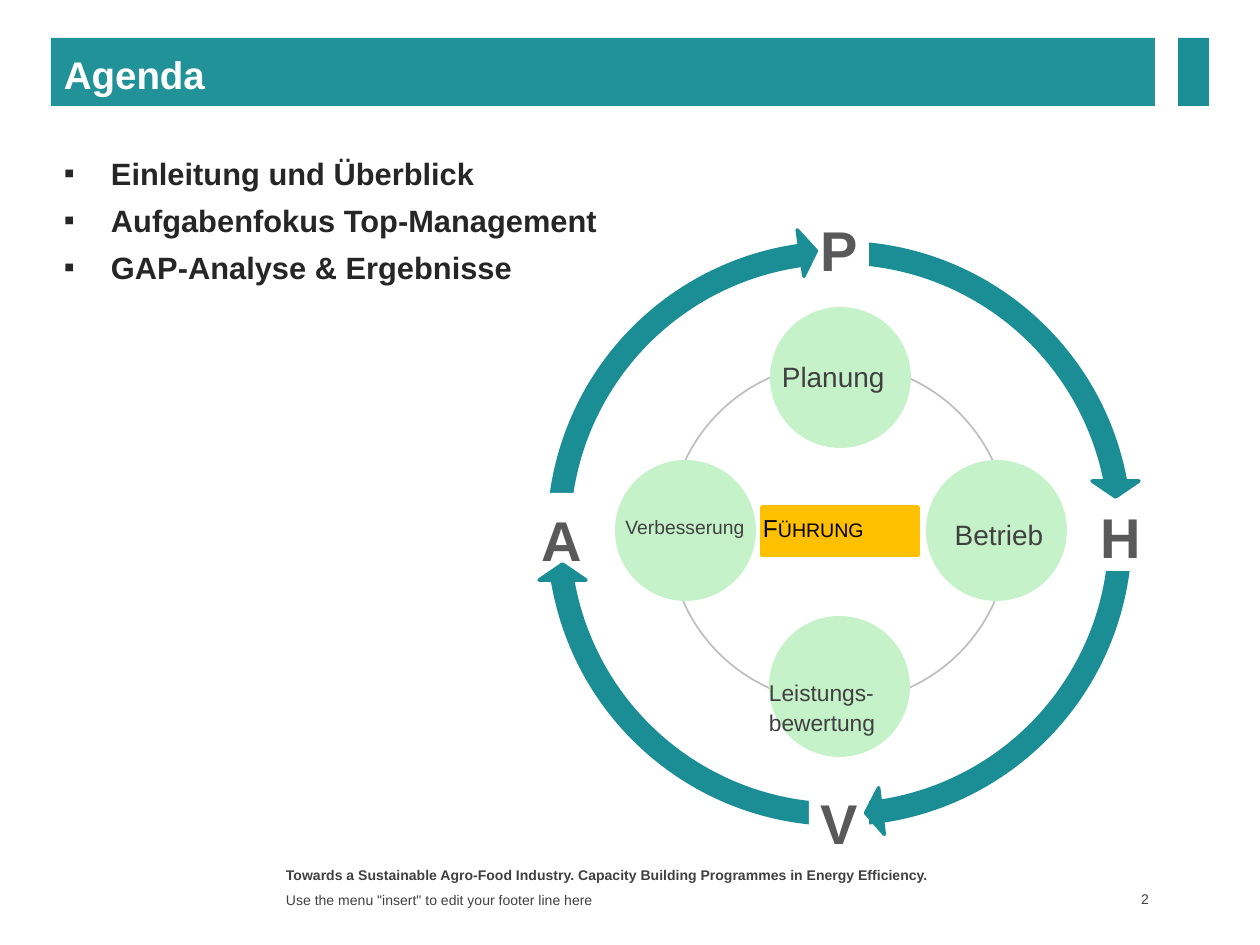
import pptx
import pptx.util
import pptx.dml.color
import pptx.enum.shapes
import pptx.enum.text
import pptx.oxml.ns
import lxml.etree

SHAPE = pptx.enum.shapes.MSO_SHAPE
ALIGN = pptx.enum.text.PP_ALIGN
ANCHOR = pptx.enum.text.MSO_ANCHOR
PX_PER_INCH = 126
TEAL = "1B8E95"
AMBER = "FFC000"
WHITE = "FFFFFF"
DARK = "404040"


def px(length):
    return pptx.util.Emu(round(length * 914400 / PX_PER_INCH))


def color(hex_code):
    return pptx.dml.color.RGBColor.from_string(hex_code)


class AgendaSlide:
    font_name = "Arial"
    line_spacing = 1.1

    def __init__(self, deck):
        self.slide = deck.slides.add_slide(deck.slide_layouts[6])

    def shape(self, preset, box, fill=None, line=None, line_width=1, turn=0):
        item = self.slide.shapes.add_shape(preset, *map(px, box))
        item.shadow.inherit = False
        item.rotation = turn
        if fill:
            item.fill.solid()
            item.fill.fore_color.rgb = color(fill)
        else:
            item.fill.background()
        if line:
            item.line.color.rgb = color(line)
            item.line.width = pptx.util.Pt(line_width)
            outline = item.line.fill._xPr
            lxml.etree.SubElement(outline, pptx.oxml.ns.qn("a:round"))
        else:
            item.line.fill.background()
        return item

    def label(self, item, lines, size, ink=DARK, bold=False, align=ALIGN.LEFT,
              anchor=ANCHOR.TOP, side=13, bullet=None, small_caps=False):
        frame = item.text_frame
        frame.word_wrap = True
        frame.vertical_anchor = anchor
        frame.margin_left = frame.margin_right = px(side)
        frame.margin_top = frame.margin_bottom = px(6)
        for index, line in enumerate(lines):
            paragraph = frame.add_paragraph() if index else frame.paragraphs[0]
            paragraph.alignment = align
            paragraph.line_spacing = self.line_spacing
            if bullet:
                if index:
                    paragraph.space_before = pptx.util.Pt(size * 0.2)
                self.add_bullet(paragraph, bullet)
            run = paragraph.add_run()
            run.text = line
            run.font.name = self.font_name
            run.font.size = pptx.util.Pt(size)
            run.font.bold = bold
            run.font.color.rgb = color(ink)
            if small_caps:
                run._r.get_or_add_rPr().set("cap", "small")

    def add_bullet(self, paragraph, mark, hang=47):
        properties = paragraph._p.get_or_add_pPr()
        properties.set("marL", str(px(hang)))
        properties.set("indent", str(-px(hang)))
        qn = pptx.oxml.ns.qn
        lxml.etree.SubElement(properties, qn("a:buFont")).set("typeface", self.font_name)
        lxml.etree.SubElement(properties, qn("a:buChar")).set("char", mark)

    def text(self, box, lines, size, **style):
        self.label(self.slide.shapes.add_textbox(*map(px, box)), lines, size, **style)

    def ring(self, box):
        band = self.shape(SHAPE.BLOCK_ARC, box, TEAL, turn=270)
        for index, value in enumerate((108, 105.73, 0.04)):
            band.adjustments[index] = value

    def letter(self, left, top, name):
        tile = self.shape(SHAPE.RECTANGLE, (left, top, 60, 81), WHITE)
        self.label(tile, [name], 32, ink="595959", bold=True, align=ALIGN.CENTER, side=0)

    def arrow_tip(self, left, top, turn):
        self.shape(SHAPE.ISOSCELES_TRIANGLE, (left, top, 47, 16), TEAL, TEAL, 2, turn)

    def phase(self, left, top):
        self.shape(SHAPE.OVAL, (left, top, 141, 141), "C6F2C9")


def main():
    deck = pptx.Presentation()
    deck.slide_width, deck.slide_height = px(1260), px(945)
    agenda = AgendaSlide(deck)

    title = agenda.shape(SHAPE.RECTANGLE, (51, 38, 1104, 68), "209298")
    agenda.label(title, ["Agenda"], 22, ink=WHITE, bold=True, anchor=ANCHOR.MIDDLE)
    agenda.shape(SHAPE.RECTANGLE, (1178, 38, 31, 68), TEAL)
    topics = ["Einleitung und Überblick", "Aufgabenfokus Top-Management",
              "GAP-Analyse & Ergebnisse"]
    agenda.text((51, 145, 597, 156), topics, 17.6, ink="262626", bold=True, bullet="▪")

    agenda.shape(SHAPE.RECTANGLE, (762, 507, 156, 48), AMBER, AMBER, 2)
    agenda.ring((547, 241, 585, 585))
    for left, top, name in ((809, 203, "P"), (1091, 490, "H"),
                            (809, 776, "V"), (532, 493, "A")):
        agenda.letter(left, top, name)
    agenda.text((750, 504, 181, 89), ["Führung"], 14, ink="000000", small_caps=True)
    agenda.shape(SHAPE.OVAL, (669, 363, 340, 340), line="BFBFBF")
    for left, top, turn in ((539, 564, 0), (785, 244, 81.8),
                            (1092, 481, 180), (850, 804, 263.1)):
        agenda.arrow_tip(left, top, turn)
    for left, top in ((770, 307), (769, 616), (615, 460), (926, 460)):
        agenda.phase(left, top)
    for box, name, size, align in (
        ((769, 350, 141, 81), "Planung", 16, ALIGN.LEFT),
        ((924, 508, 150, 47), "Betrieb", 16, ALIGN.CENTER),
        ((756, 670, 168, 96), "Leistungs-bewertung", 13, ALIGN.LEFT),
        ((610, 507, 150, 87), "Verbesserung", 11, ALIGN.CENTER),
    ):
        agenda.text(box, [name], size, align=align)

    programme = ("Towards a Sustainable Agro-Food Industry. "
                 "Capacity Building Programmes in Energy Efficiency.")
    agenda.text((273, 859, 693, 26), [programme], 8, bold=True)
    agenda.text((273, 887, 693, 24), ['Use the menu "insert" to edit your footer line here'], 8,
                anchor=ANCHOR.MIDDLE)
    agenda.text((1084, 886, 70, 25), ["2"], 8, align=ALIGN.RIGHT,
                anchor=ANCHOR.MIDDLE, side=5)
    deck.save("out.pptx")


if __name__ == "__main__":
    main()
